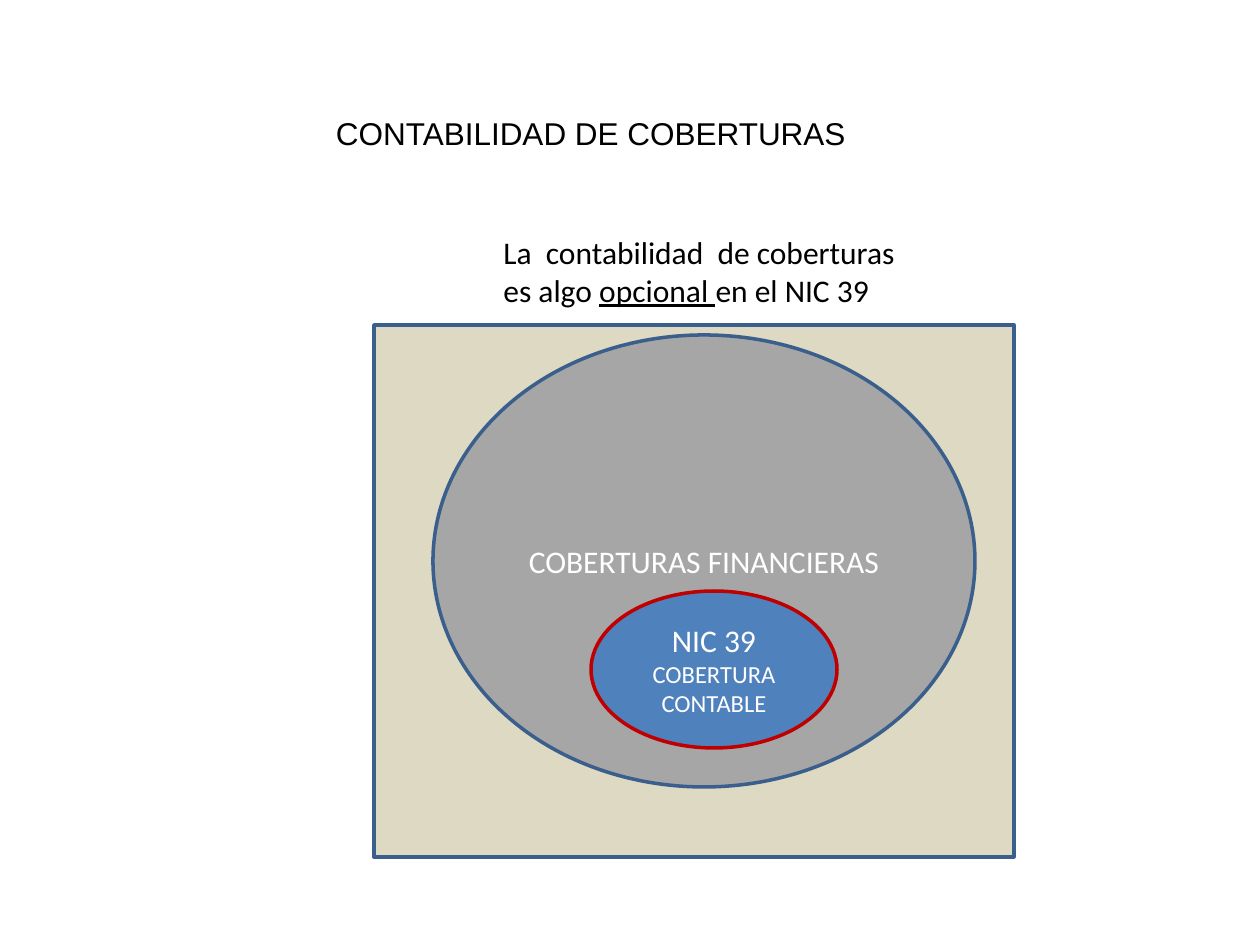
from pptx import Presentation
from pptx.dml.color import RGBColor as RGB
from pptx.enum.shapes import MSO_SHAPE as Shape
from pptx.enum.text import MSO_ANCHOR as Anchor, PP_ALIGN as Align
from pptx.util import Inches, Pt

PX = Inches(1) / 126

THEME = {
    "sand": RGB(0xDD, 0xD9, 0xC3),
    "gray": RGB(0xA6, 0xA6, 0xA6),
    "blue": RGB(0x4F, 0x81, 0xBD),
    "navy": RGB(0x3A, 0x5F, 0x8C),
    "red": RGB(0xC0, 0x00, 0x00),
    "white": RGB(0xFF, 0xFF, 0xFF),
    "black": RGB(0x00, 0x00, 0x00),
    "heading": "Arial",
    "text": "Calibri",
    "large": Pt(18),
    "small": Pt(14),
    "outline": Pt(2),
}


def px(*lengths):
    return [round(length * PX) for length in lengths]


def add_run(paragraph, text, face, size, color, underline=False):
    run = paragraph.add_run()
    run.text = text
    font_format = {"name": THEME[face], "size": THEME[size], "underline": underline}
    for key, value in font_format.items():
        setattr(run.font, key, value)
    run.font.color.rgb = THEME[color]


prs = Presentation()
prs.slide_width, prs.slide_height = px(1260, 945)
slide = prs.slides.add_slide(prs.slide_layouts[5])

# Title
title = slide.shapes.title
title.left, title.top, title.width, title.height = px(315, 108, 549, 50)
title_format = {
    "word_wrap": True,
    "vertical_anchor": Anchor.TOP,
    "margin_left": px(21)[0],
    "margin_right": 0,
}
for key, value in title_format.items():
    setattr(title.text_frame, key, value)
heading = title.text_frame.paragraphs[0]
heading.alignment = Align.LEFT
add_run(heading, "CONTABILIDAD DE COBERTURAS", "heading", "large", "black")

# Nested sets: everything, financial hedges, accounting hedges
nested_sets = [
    (Shape.RECTANGLE, (374, 325, 640, 532), "sand", "navy", []),
    (Shape.OVAL, (433, 335, 542, 452), "gray", "navy",
     [("COBERTURAS FINANCIERAS", "large")]),
    (Shape.OVAL, (591, 591, 246, 157), "blue", "red",
     [("NIC 39", "large"), ("COBERTURA CONTABLE", "small")]),
]
for kind, box, fill, outline, labels in nested_sets:
    region = slide.shapes.add_shape(kind, *px(*box))
    region.shadow.inherit = False
    region.fill.solid()
    region.fill.fore_color.rgb = THEME[fill]
    region.line.color.rgb = THEME[outline]
    region.line.width = THEME["outline"]
    frame = region.text_frame
    frame.vertical_anchor = Anchor.MIDDLE
    for i, (label, size) in enumerate(labels):
        line = frame.add_paragraph() if i else frame.paragraphs[0]
        line.alignment = Align.CENTER
        add_run(line, label, "text", size, "white")

# Remark above the sets
remark = slide.shapes.add_textbox(*px(491, 227, 525, 127)).text_frame
remark.word_wrap = True
remark.vertical_anchor = Anchor.TOP
remark_lines = [
    [("La  contabilidad  de coberturas", False)],
    [("es algo ", False), ("opcional ", True), ("en el NIC 39", False)],
]
for i, pieces in enumerate(remark_lines):
    line = remark.add_paragraph() if i else remark.paragraphs[0]
    for text, underline in pieces:
        add_run(line, text, "text", "large", "black", underline)

prs.save("out.pptx")
